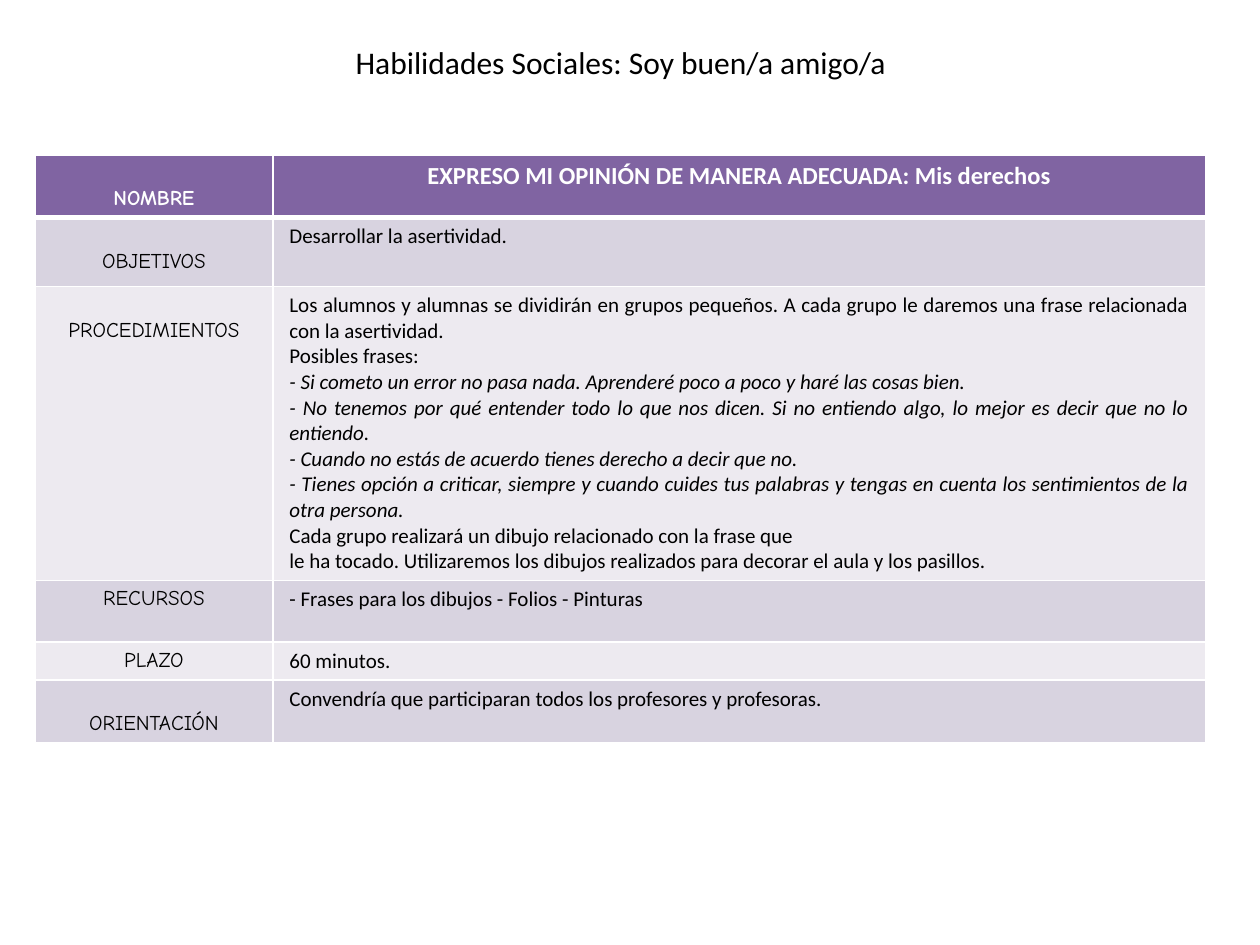
from dataclasses import dataclass

from lxml import etree
from pptx import Presentation
from pptx.dml.color import RGBColor
from pptx.enum.text import MSO_ANCHOR, MSO_AUTO_SIZE, PP_ALIGN
from pptx.oxml.ns import qn
from pptx.util import Pt

LEFT, CENTER, JUSTIFY = PP_ALIGN.LEFT, PP_ALIGN.CENTER, PP_ALIGN.JUSTIFY
TOP = MSO_ANCHOR.TOP
NO_AUTOFIT = MSO_AUTO_SIZE.NONE

COLORS = {
    "header": "8064A2",
    "odd": "D8D3E0",
    "even": "EDEAF0",
    "white": "FFFFFF",
    "black": "000000",
}
BODY_FONT, LABEL_FONT = "Calibri", "Comic Neue"
SIDE_INSET, EDGE_INSET, LABEL_DROP = 9.4, 3.6, 14.6
COLUMN_WIDTHS = (136, 533)


@dataclass
class Section:
    label: str
    lines: list[str]
    height: float
    dropped: bool = True
    align: PP_ALIGN = JUSTIFY


SECTIONS = [
    Section("NOMBRE", ["EXPRESO MI OPINIÓN DE MANERA ADECUADA: Mis derechos"], 34.5, align=CENTER),
    Section("OBJETIVOS", ["Desarrollar la asertividad."], 39.5),
    Section("PROCEDIMIENTOS", [
        "Los alumnos y alumnas se dividirán en grupos pequeños. A cada grupo le daremos "
        "una frase relacionada con la asertividad.",
        "Posibles frases:",
        "- Si cometo un error no pasa nada. Aprenderé poco a poco y haré las cosas bien.",
        "- No tenemos por qué entender todo lo que nos dicen. Si no entiendo algo, "
        "lo mejor es decir que no lo entiendo.",
        "- Cuando no estás de acuerdo tienes derecho a decir que no.",
        "- Tienes opción a criticar, siempre y cuando cuides tus palabras y tengas en cuenta "
        "los sentimientos de la otra persona.",
        "Cada grupo realizará un dibujo relacionado con la frase que",
        "le ha tocado. Utilizaremos los dibujos realizados para decorar el aula y los pasillos.",
    ], 166),
    Section("RECURSOS", ["- Frases para los dibujos - Folios - Pinturas"], 35, dropped=False),
    Section("PLAZO", ["60 minutos."], 19.5, dropped=False, align=LEFT),
    Section("ORIENTACIÓN", ["Convendría que participaran todos los profesores y profesoras."], 35),
]


def add_text(frame, text: str, *, font: str = BODY_FONT, size: float = 12,
             color: str = "black", bold: bool = False, italic: bool = False,
             align: PP_ALIGN = LEFT, first: bool = True) -> None:
    paragraph = frame.paragraphs[0] if first else frame.add_paragraph()
    paragraph.alignment = align
    run = paragraph.add_run()
    run.text = text
    run.font.name = font
    run.font.size = Pt(size)
    run.font.bold = bold
    run.font.italic = italic
    run.font.color.rgb = RGBColor.from_string(COLORS[color])


def style_cell(cell, fill: str, top_line: float, bottom_line: float, drop: float = 0) -> None:
    cell.margin_left = cell.margin_right = Pt(SIDE_INSET)
    cell.margin_top = Pt(EDGE_INSET + drop)
    cell.margin_bottom = Pt(EDGE_INSET)
    cell.vertical_anchor = TOP
    properties = cell._tc.get_or_add_tcPr()
    for side, width in (("L", 1), ("R", 1), ("T", top_line), ("B", bottom_line)):
        line = etree.SubElement(properties, qn(f"a:ln{side}"), w=str(Pt(width)))
        paint = etree.SubElement(line, qn("a:solidFill"))
        etree.SubElement(paint, qn("a:srgbClr"), val=COLORS["white"])
    cell.fill.solid()
    cell.fill.fore_color.rgb = RGBColor.from_string(COLORS[fill])


def add_title(slide, text: str) -> None:
    title = slide.shapes.title
    title.left, title.top, title.width, title.height = Pt(196), Pt(21), Pt(346), Pt(29)
    frame = title.text_frame
    frame.auto_size = NO_AUTOFIT
    frame.vertical_anchor = TOP
    add_text(frame, text, size=18)


def add_sections(slide, sections: list[Section]) -> None:
    total_height = sum(section.height for section in sections)
    table = slide.shapes.add_table(
        len(sections), len(COLUMN_WIDTHS), Pt(20), Pt(88.6),
        Pt(sum(COLUMN_WIDTHS)), Pt(total_height)).table
    for column, width in zip(table.columns, COLUMN_WIDTHS):
        column.width = Pt(width)
    for index, section in enumerate(sections):
        table.rows[index].height = Pt(section.height)
        header = index == 0
        fill = "header" if header else ("odd" if index % 2 else "even")
        color = "white" if header else "black"
        top_line, bottom_line = (3 if index == 1 else 1), (3 if header else 1)
        label, content = table.cell(index, 0), table.cell(index, 1)
        style_cell(label, fill, top_line, bottom_line, LABEL_DROP if section.dropped else 0)
        style_cell(content, fill, top_line, bottom_line)
        add_text(label.text_frame, section.label, font=LABEL_FONT,
                 color=color, bold=header, align=CENTER)
        for position, line in enumerate(section.lines):
            add_text(content.text_frame, line, size=14 if header else 12, color=color,
                     bold=header, italic=len(section.lines) > 1 and line.startswith("- "),
                     align=section.align, first=position == 0)


def main() -> None:
    deck = Presentation()
    deck.slide_width, deck.slide_height = Pt(720), Pt(540)
    slide = deck.slides.add_slide(deck.slide_layouts[5])
    add_title(slide, "Habilidades Sociales: Soy buen/a amigo/a")
    add_sections(slide, SECTIONS)
    deck.save("out.pptx")


if __name__ == "__main__":
    main()
